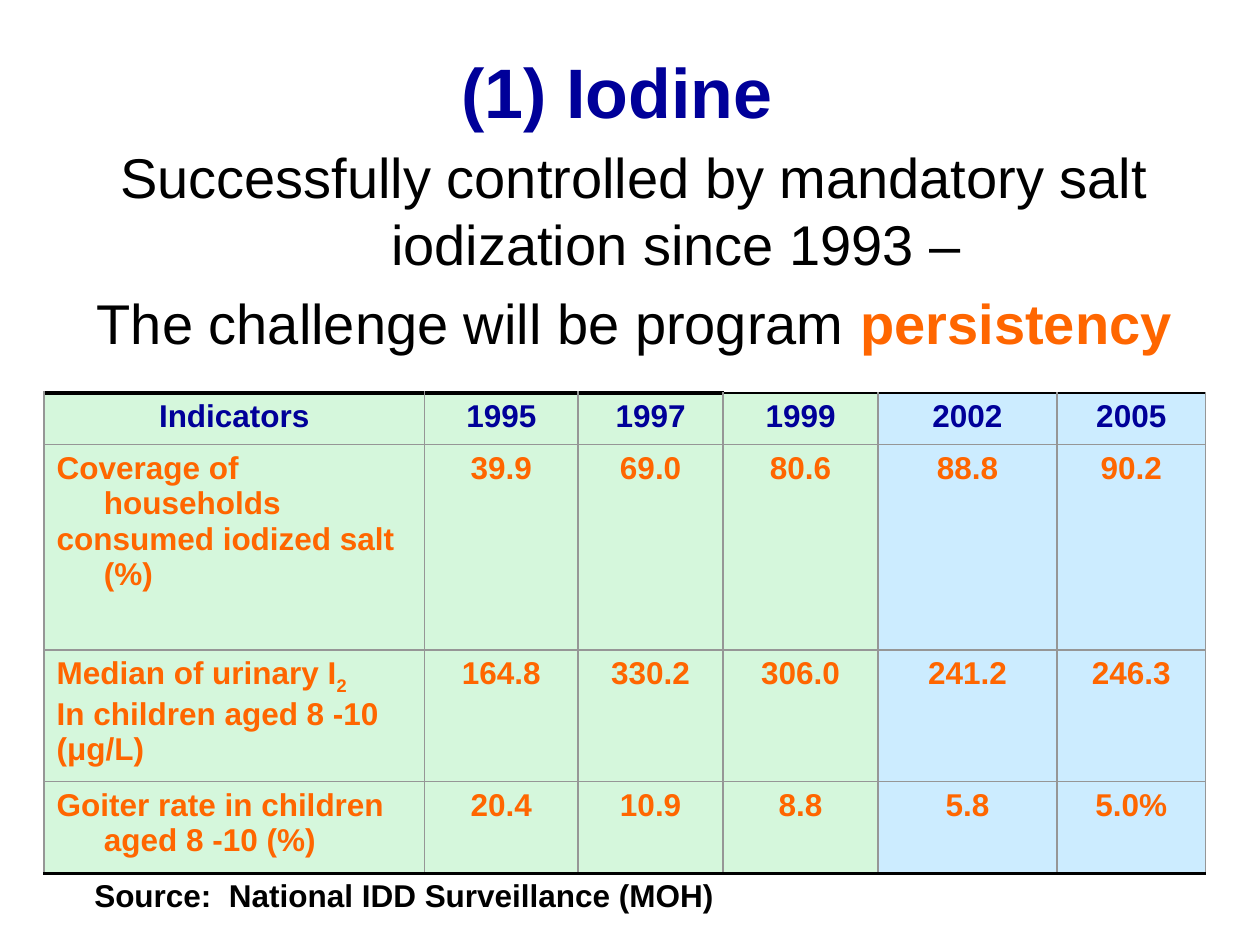
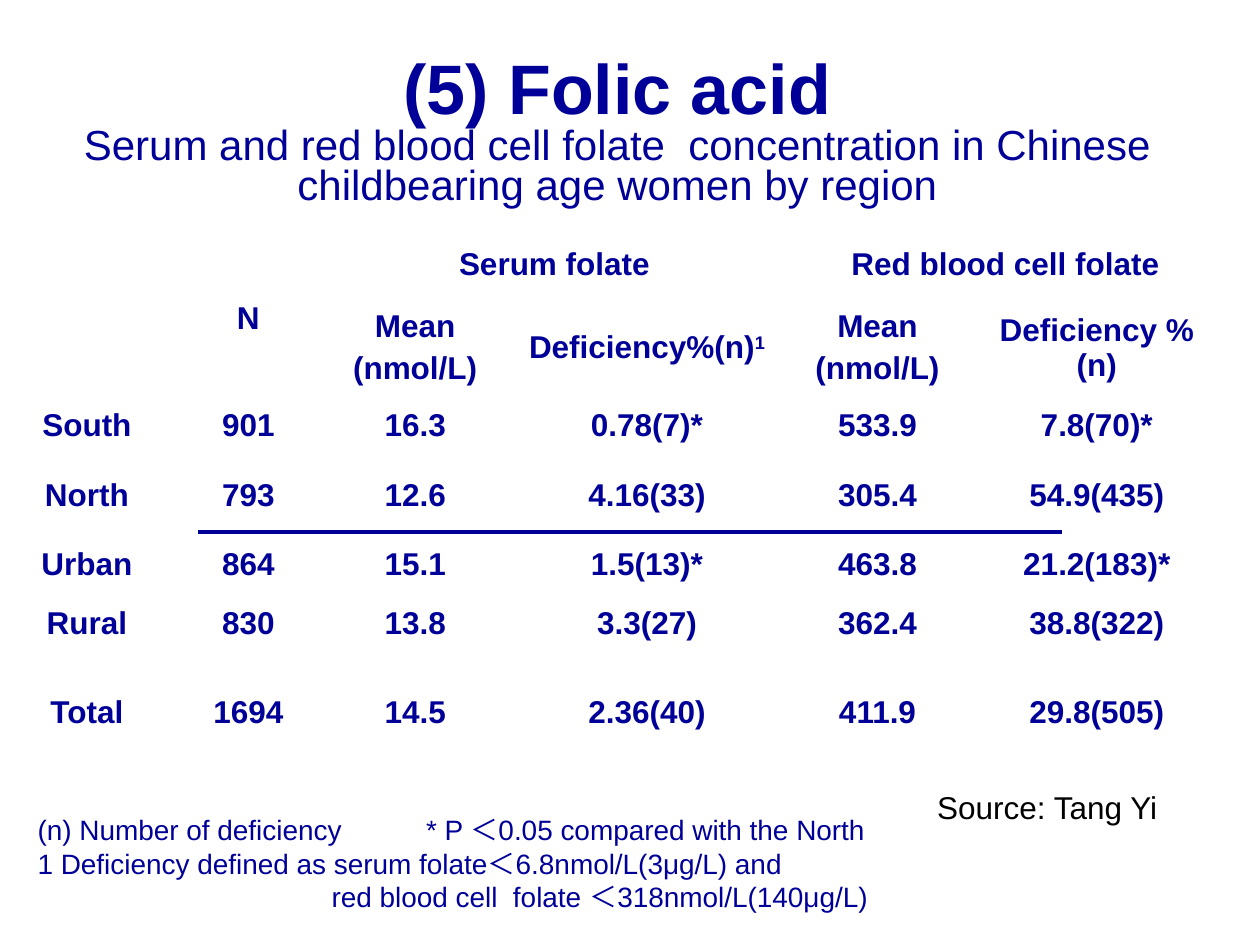
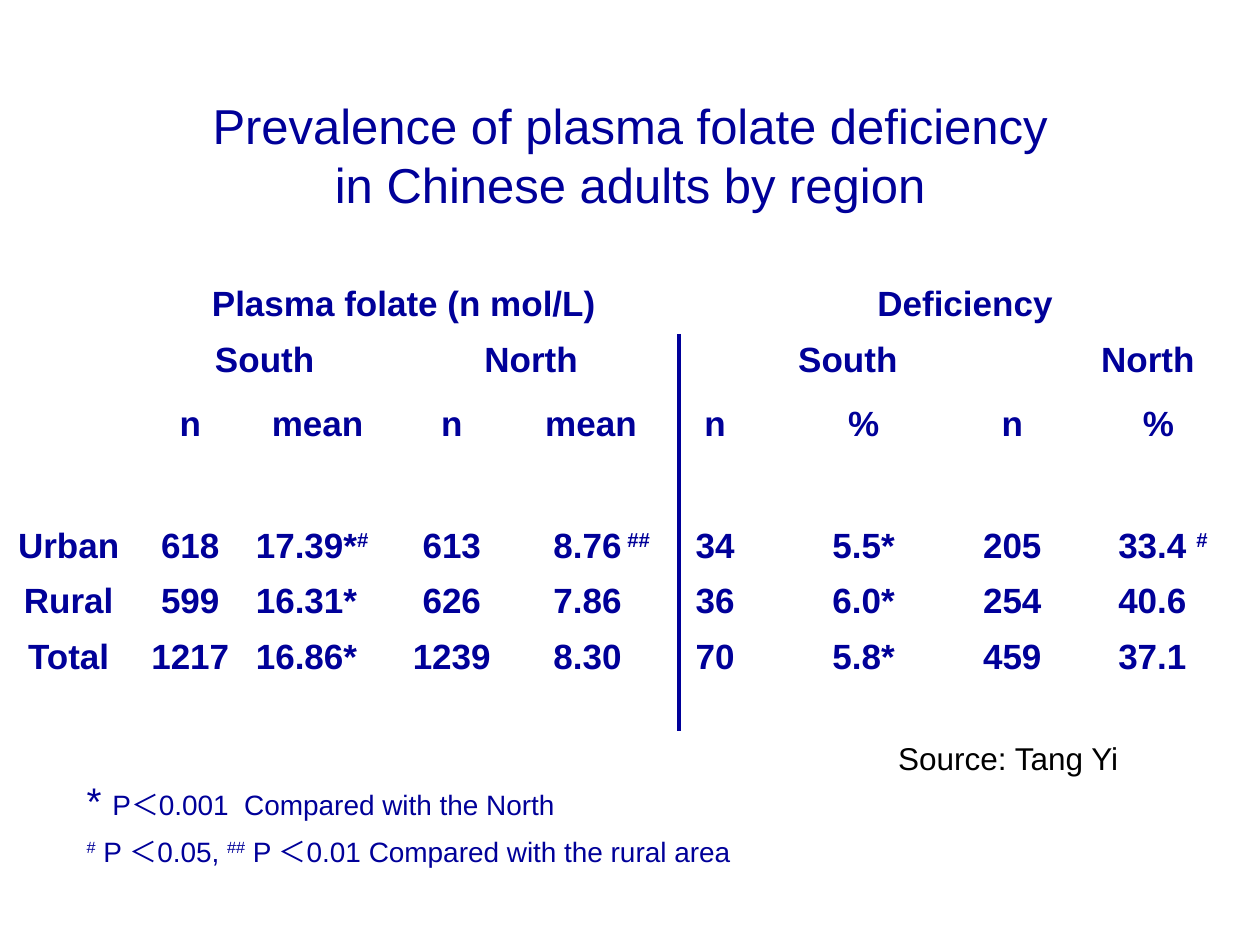
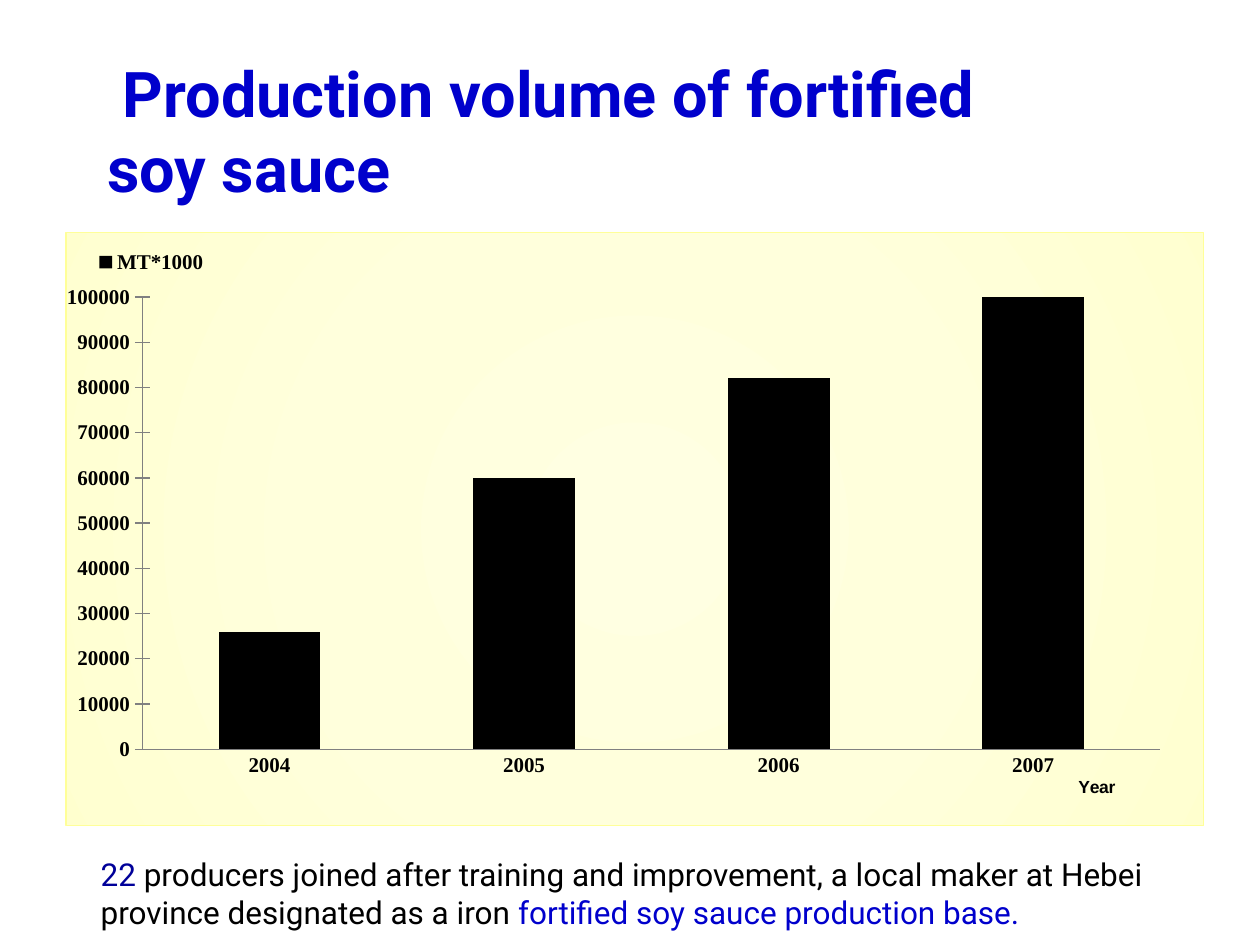
from dataclasses import dataclass, replace
from typing import NamedTuple, Optional, Sequence, Union

from lxml import etree
from pptx import Presentation
from pptx.chart.data import CategoryChartData
from pptx.dml.color import RGBColor
from pptx.enum import chart as ch, shapes as sh, text as tx
from pptx.oxml import parse_xml
from pptx.oxml.ns import nsdecls, qn
from pptx.util import Pt

HEX = {
    "navy": "000099", "blue": "0000CC", "orange": "FF6600", "black": "000000",
    "grey": "969696", "axis": "808080", "green": "D5F7DC", "sky": "CCECFF",
    "yellow": "FFFF99",
}
GLOW = ((0, "FFFFE2"), (50, "FFFFDC"), (97, "FFFFD1"), (100, "FFFFCE"))
PLAIN = "{2D5ABB26-0587-4C30-8999-92F81FD0307C}"
LEFT, MID = tx.PP_ALIGN.LEFT, tx.PP_ALIGN.CENTER
TOP, CORE = tx.MSO_ANCHOR.TOP, tx.MSO_ANCHOR.MIDDLE


class Box(NamedTuple):
    left: float
    top: float
    width: float
    height: float

    def lengths(self) -> list:
        return [Pt(side) for side in self]


class Run(NamedTuple):
    text: str
    color: Optional[str] = None
    bold: Optional[bool] = None
    size: Optional[float] = None
    base: int = 0


@dataclass(frozen=True)
class Style:
    size: float
    color: str = "navy"
    bold: bool = False
    font: str = "Arial"
    align: int = LEFT
    left: float = 0
    indent: float = 0
    before: float = 0
    line: Optional[float] = None
    tab: float = 0


@dataclass(frozen=True)
class Par:
    runs: Sequence[Union[str, Run]]
    style: Optional[Style] = None


Copy = Union[str, Sequence[Par]]


class Grid(NamedTuple):
    left: float
    top: float
    cols: Sequence[float]
    rows: Sequence[float]
    spans: Sequence[tuple] = ()


HEAD = Style(40, bold=True, align=MID)
SUB = Style(28, align=MID)
CELL = Style(18, bold=True, align=MID, before=3.6)
NOTE = Style(16)
CREDIT = Style(18, "black")


def rgb(name: str) -> RGBColor:
    return RGBColor.from_string(HEX[name])


def ink(font, size: float, color: str, bold: bool, face: str) -> None:
    font.size, font.bold, font.name = Pt(size), bold, face
    font.color.rgb = rgb(color)


def shape_par(par, style: Style, first: bool) -> None:
    """Set tabs, indents, spacing and font of one paragraph."""
    props = par._p.get_or_add_pPr()
    if style.left or style.indent:
        props.set("marL", str(Pt(style.left)))
        props.set("indent", str(Pt(style.indent)))
    if style.tab:
        tabs = etree.SubElement(props, qn("a:tabLst"))
        etree.SubElement(tabs, qn("a:tab"), pos=str(Pt(style.tab)), algn="l")
    par.alignment = style.align
    if style.line:
        par.line_spacing = style.line
    par.space_before = Pt(0 if first else style.before)
    ink(par.font, style.size, style.color, style.bold, style.font)


def write(frame, copy: Copy, style: Style) -> None:
    pars = [Par([row]) for row in copy.split("\n")] if isinstance(copy, str) else copy
    for i, item in enumerate(pars):
        par = frame.add_paragraph() if i else frame.paragraphs[0]
        shape_par(par, item.style or style, i == 0)
        for part in item.runs:
            bit = Run(part) if isinstance(part, str) else part
            if not bit.text:
                continue
            run = par.add_run()
            run.text = bit.text
            if bit.color:
                run.font.color.rgb = rgb(bit.color)
            if bit.bold is not None:
                run.font.bold = bit.bold
            if bit.size:
                run.font.size = Pt(bit.size)
            if bit.base:
                run._r.get_or_add_rPr().set("baseline", str(bit.base * 1000))


def add_text(slide, box: Box, copy: Copy, style: Style) -> None:
    frame = slide.shapes.add_textbox(*box.lengths()).text_frame
    frame.word_wrap = True
    write(frame, copy, style)


def add_page(deck, box: Box, copy: Copy, style: Style, anchor=CORE):
    """Add a title-only slide and fill its title."""
    slide = deck.slides.add_slide(deck.slide_layouts[5])
    title = slide.shapes.title
    title.left, title.top, title.width, title.height = box.lengths()
    frame = title.text_frame
    frame.auto_size = tx.MSO_AUTO_SIZE.NONE
    frame.vertical_anchor = anchor
    write(frame, copy, style)
    return slide


def add_rule(slide, x1: float, y1: float, x2: float, y2: float) -> None:
    rule = slide.shapes.add_connector(
        sh.MSO_CONNECTOR.STRAIGHT, Pt(x1), Pt(y1), Pt(x2), Pt(y2))
    rule.line.color.rgb = rgb("navy")
    rule.line.width = Pt(2.25)
    etree.SubElement(rule._element.spPr, qn("a:effectLst"))


def add_grid(slide, grid: Grid):
    """Add an unstyled table with its sizes and merged cells."""
    box = Box(grid.left, grid.top, sum(grid.cols), sum(grid.rows))
    table = slide.shapes.add_table(
        len(grid.rows), len(grid.cols), *box.lengths()).table
    table.first_row = table.horz_banding = False
    table._tbl.tblPr.find(qn("a:tableStyleId")).text = PLAIN
    for col, width in zip(table.columns, grid.cols):
        col.width = Pt(width)
    for row, height in zip(table.rows, grid.rows):
        row.height = Pt(height)
    for r1, c1, r2, c2 in grid.spans:
        table.cell(r1, c1).merge(table.cell(r2, c2))
    return table


def fill_cell(cell, copy: Copy, style: Style, anchor=TOP,
              fill: Optional[str] = None) -> None:
    cell.vertical_anchor = anchor
    if fill:
        cell.fill.solid()
        cell.fill.fore_color.rgb = rgb(fill)
    else:
        cell.fill.background()
    write(cell.text_frame, copy, style)


def edge(cell, side: str, color: str, width: float) -> None:
    props = cell._tc.get_or_add_tcPr()
    line = etree.SubElement(props, qn(f"a:ln{side}"), w=str(Pt(width)))
    solid = etree.SubElement(line, qn("a:solidFill"))
    etree.SubElement(solid, qn("a:srgbClr"), val=HEX[color])


def lay_out(part, **spots: float) -> None:
    """Give a chart part a manual layout, in shares of the chart."""
    for old in part.findall(qn("c:layout")):
        part.remove(old)
    layout = etree.Element(qn("c:layout"))
    manual = etree.SubElement(layout, qn("c:manualLayout"))
    if part.tag == qn("c:plotArea"):
        etree.SubElement(manual, qn("c:layoutTarget"), val="inner")
    for key in ("xMode", "yMode"):
        etree.SubElement(manual, qn(f"c:{key}"), val="edge")
    for key, value in spots.items():
        etree.SubElement(manual, qn(f"c:{key}"), val=str(value))
    cover = part.find(qn("c:overlay"))
    if cover is None:
        part.insert(0, layout)
    else:
        cover.addprevious(layout)


def iodine(deck) -> None:
    slide = add_page(deck, Box(21, 24, 663, 52), "(1) Iodine", HEAD, TOP)
    add_text(slide, Box(31, 78, 663, 141), [
        Par(["Successfully controlled by mandatory salt iodization since 1993 –"]),
        Par(["The challenge will be program ", Run("persistency", "orange", True)]),
    ], Style(32, "black", align=MID, left=48, indent=-48, before=6.4))

    data = [
        ["Indicators", "1995", "1997", "1999", "2002", "2005"],
        ["Coverage of households\nconsumed iodized salt (%)",
         "39.9", "69.0", "80.6", "88.8", "90.2"],
        [[Par(["Median of urinary I", Run("2", base=-25)]),
          Par(["In children aged 8 -10"]), Par(["(μg/L)"])],
         "164.8", "330.2", "306.0", "241.2", "246.3"],
        ["Goiter rate in children aged 8 -10 (%)",
         "20.4", "10.9", "8.8", "5.8", "5.0%"],
    ]
    table = add_grid(slide, Grid(
        25.2, 224.6, (217.4, 87.8, 82.8, 88.6, 102.2, 85),
        (29.5, 117.4, 73.4, 52.6)))
    value = replace(CELL, color="orange", before=0)
    label = replace(value, align=LEFT, left=27, indent=-27)
    last = len(data) - 1
    for r, row in enumerate(data):
        for c, copy in enumerate(row):
            cell = table.cell(r, c)
            edge(cell, "L", "grey", 1)
            edge(cell, "R", "grey", 1)
            edge(cell, "T", "grey" if r else "black", 1 if r or c > 2 else 2.25)
            edge(cell, "B", *(("black", 2.25) if r == last else ("grey", 1)))
            style = CELL if r == 0 else value if c else label
            fill_cell(cell, copy, style, fill="green" if c < 4 else "sky")
    add_text(slide, Box(46.8, 496.8, 425.5, 50), "Source:  National IDD Surveillance (MOH)",
             replace(CREDIT, bold=True))


def folate(deck) -> None:
    head = replace(HEAD, line=0.8, left=20)
    slide = add_page(deck, Box(19.5, 31.7, 646.5, 90.7), [
        Par(["(5) Folic acid"], head),
        Par(["Serum and red blood cell folate  concentration in Chinese "
             "childbearing age women by region"]),
    ], Style(24, align=MID, line=0.8))

    mean = "Mean\n(nmol/L)"
    data = [
        ["", "N", "Serum folate", "", "Red blood cell folate", ""],
        ["", "", mean, [Par(["Deficiency%(n)", Run("1", base=30)])],
         mean, "Deficiency % (n)"],
        ["South", "901", "16.3", "0.78(7)*", "533.9", "7.8(70)*"],
        ["North", "793", "12.6", "4.16(33)", "305.4", "54.9(435)"],
        ["Urban", "864", "15.1", "1.5(13)*", "463.8", "21.2(183)*"],
        ["Rural", "830", "13.8", "3.3(27)", "362.4", "38.8(322)"],
        ["Total", "1694", "14.5", "2.36(40)", "411.9", "29.8(505)"],
    ]
    table = add_grid(slide, Grid(
        0, 134, (99.4, 85, 105.8, 159.1, 104.4, 146.2),
        (33.8, 61.9, 39.6, 39.6, 33.8, 51.1, 55.6),
        ((0, 0, 1, 0), (0, 1, 1, 1), (0, 2, 0, 3), (0, 4, 0, 5))))
    for r, row in enumerate(data):
        for c, copy in enumerate(row):
            fill_cell(table.cell(r, c), copy, CELL, CORE if r < 2 else TOP)

    add_text(slide, Box(14.4, 460.8, 692, 84), [
        Par(["(n) Number of deficiency\t* P ＜0.05 compared with the North"],
            replace(NOTE, tab=222)),
        Par(["1 Deficiency defined as serum folate＜6.8nmol/L(3μg/L) and"]),
        Par(["red blood cell  folate ＜318nmol/L(140μg/L)"], replace(NOTE, left=168)),
    ], NOTE)
    add_rule(slide, 113, 303.8, 607, 303.8)
    add_text(slide, Box(528.5, 447, 144, 29), "Source: Tang Yi", CREDIT)


def plasma(deck) -> None:
    slide = add_page(
        deck, Box(54, 37.4, 612, 102.2),
        "Prevalence of plasma folate deficiency\nin Chinese adults by region", SUB)

    mean = [Par(["17.39*", Run("#", base=30)]), Par(["16.31*"]), Par(["16.86*"])]
    north = [Par(["8.76", Run(" ##", base=30)]), Par(["7.86"]), Par(["8.30"])]
    share = [Par(["33.4 ", Run("#", base=30)]), Par(["40.6"]), Par(["37.1"])]
    data = [
        ["", "Plasma folate (n mol/L)", "", "", "", "Deficiency", "", "", ""],
        ["", "South", "", "North", "", "South", "", "North", ""],
        ["", "n", "mean", "n", "mean", "n", "%", "n", "%"],
        ["Urban\nRural\nTotal", "618\n599\n1217", mean, "613\n626\n1239", north,
         "34\n36\n70", "5.5*\n6.0*\n5.8*", "205\n254\n459", share],
    ]
    pairs = [(1, c, 1, c + 1) for c in (1, 3, 5, 7)]
    table = add_grid(slide, Grid(
        0, 157, (78.5, 60.5, 85, 68.4, 90.7, 51.1, 118.8, 51.1, 115.9),
        (33.8, 30, 43.2, 154.1),
        [(0, 0, 2, 0), (0, 1, 0, 4), (0, 5, 0, 8), *pairs]))
    bold = replace(CELL, size=20, before=4)
    tall = replace(bold, line=1.25)
    shift = {(1, 5): 33, (1, 7): 39}
    inset = {2: 0, 4: 16.7, 8: 27.8}
    for r, row in enumerate(data):
        for c, copy in enumerate(row):
            style = replace(bold, left=shift.get((r, c), 0))
            if r == 3:
                style = (replace(tall, align=LEFT, left=inset[c])
                         if c in inset else tall)
            fill_cell(table.cell(r, c), copy, style, CORE)

    add_text(slide, Box(42.5, 445.7, 529, 53), [
        Par([Run("* ", size=22), "P＜0.001  Compared with the North"]),
        Par([Run("#", base=30), " P ＜0.05, ", Run("##", base=30),
             " P ＜0.01 Compared with the rural area"]),
    ], replace(NOTE, line=0.8, before=10))
    add_rule(slide, 388, 190.8, 388, 417.6)
    add_text(slide, Box(506.2, 419, 144, 29), "Source: Tang Yi", CREDIT)


def add_bars(slide, box: Box) -> None:
    data = CategoryChartData()
    data.categories = ["2004", "2005", "2006", "2007"]
    data.add_series("MT*1000", (26000, 60000, 82000, 100000))
    chart = slide.shapes.add_chart(
        ch.XL_CHART_TYPE.COLUMN_CLUSTERED, *box.lengths(), data).chart
    ink(chart.font, 10, "black", False, "Arial")
    chart.has_title = False

    plot = chart.plots[0]
    plot.gap_width = 150
    plot.vary_by_categories = False
    bars = plot.series[0].format.fill
    bars.solid()
    bars.fore_color.rgb = rgb("black")

    years, tons = chart.category_axis, chart.value_axis
    for axis, tick in ((years, ch.XL_TICK_MARK.NONE), (tons, ch.XL_TICK_MARK.CROSS)):
        axis.has_major_gridlines = False
        axis.major_tick_mark = tick
        axis.minor_tick_mark = ch.XL_TICK_MARK.NONE
        axis.format.line.color.rgb = rgb("axis")
        ink(axis.tick_labels.font, 12, "black", True, "Times New Roman")
    tons.minimum_scale, tons.maximum_scale, tons.major_unit = 0, 100000, 10000
    write(years.axis_title.text_frame, "Year", Style(10, "black", True))

    chart.has_legend = True
    legend = chart.legend
    legend.position = ch.XL_LEGEND_POSITION.RIGHT
    legend.include_in_layout = False
    ink(legend.font, 12, "black", True, "Times New Roman")

    root = chart._chartSpace
    lay_out(root.chart.plotArea, x=0.067, y=0.109, w=0.895, h=0.762)
    lay_out(legend._element, x=0.015, y=0.02, w=0.12, h=0.06)
    lay_out(years.axis_title._element, x=0.887, y=0.91)
    stops = "".join(
        f'<a:gs pos="{at * 1000}"><a:srgbClr val="{tint}"/></a:gs>' for at, tint in GLOW)
    root.find(qn("c:txPr")).addprevious(parse_xml(
        f'<c:spPr {nsdecls("c", "a")}><a:gradFill><a:gsLst>{stops}</a:gsLst>'
        '<a:path path="circle"><a:fillToRect l="50000" t="50000" r="50000" b="50000"/>'
        f'</a:path></a:gradFill><a:ln w="{Pt(0.75)}"><a:solidFill>'
        f'<a:srgbClr val="{HEX["yellow"]}"/></a:solidFill></a:ln></c:spPr>'))


def sauce(deck) -> None:
    head = Style(36, "blue", True, "Roboto")
    slide = add_page(deck, Box(54, 31.7, 612, 85), [
        Par(["Production volume of fortified"], replace(head, indent=9)),
        Par(["soy sauce"]),
    ], head)
    add_bars(slide, Box(37.4, 132.5, 650.9, 339.8))
    add_text(slide, Box(50.4, 485.3, 618.5, 50.4), [Par([
        Run("22 ", "navy"),
        "producers joined after training and improvement, a local maker at Hebei "
        "province designated as a iron ",
        Run("fortified soy sauce production base.", "blue"),
    ])], Style(18, "black", font="Roboto"))


def main() -> None:
    deck = Presentation()
    deck.slide_width, deck.slide_height = Pt(720), Pt(540)
    for build in (iodine, folate, plasma, sauce):
        build(deck)
    deck.save("out.pptx")


if __name__ == "__main__":
    main()
